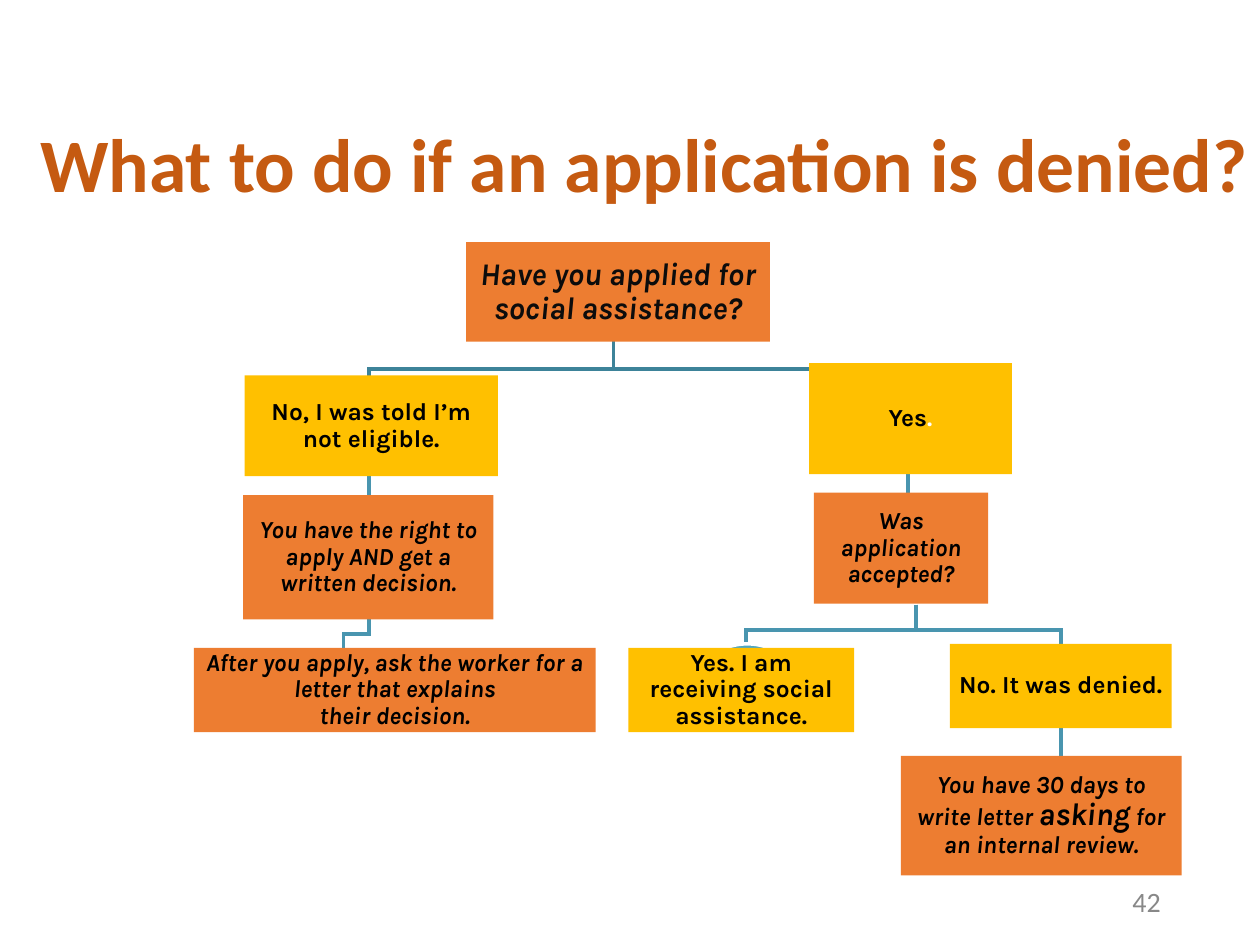
from dataclasses import dataclass

from lxml import etree
from pptx import Presentation
from pptx.dml.color import RGBColor
from pptx.enum import shapes, text
from pptx.oxml.ns import qn
from pptx.util import Cm, Pt


@dataclass(frozen=True)
class Theme:
    title: str = "C55A11"
    orange: str = "ED7D31"
    yellow: str = "FFC000"
    circle: str = "4FA6C1"
    line: str = "4995AF"
    root_line: str = "3D8399"
    black: str = "000000"
    root_text: str = "0C0C0C"
    white: str = "FFFFFF"
    grey: str = "888888"
    title_font: str = "Calibri"
    box_font: str = "Karla"
    title_size: float = 43.2
    number_size: float = 16
    large: float = 18
    body: float = 14
    line_width: float = 2
    elbow: float = 0.28


THEME = Theme()


@dataclass(frozen=True)
class Run:
    text: str
    size: float = THEME.body
    color: str = THEME.black


@dataclass(frozen=True)
class Box:
    """A flow chart box, in cm; questions and advice are orange and italic."""
    left: float
    top: float
    width: float
    height: float
    paragraphs: list[list[Run]]
    answer: bool = False


@dataclass(frozen=True)
class Link:
    x1: float
    y1: float
    x2: float
    y2: float
    color: str = THEME.line


BOXES = [
    Box(9.4, 4.88, 6.12, 2.01, [[Run("Have you applied for social assistance?",
                                     THEME.large, THEME.root_text)]]),
    Box(4.93, 7.57, 5.11, 2.03, [[Run("No, I was told I’m not eligible.")]], True),
    Box(4.9, 9.98, 5.05, 2.51,
        [[Run("You have the right to apply AND get a written decision.")]]),
    Box(3.91, 13.06, 8.1, 1.7,
        [[Run("After you apply, ask the worker for a letter that explains")],
         [Run("their decision.")]]),
    Box(16.31, 7.32, 4.09, 2.24, [[Run("Yes"), Run(".", color=THEME.white)]], True),
    Box(16.41, 9.93, 3.51, 2.24, [[Run("Was application accepted?")]]),
    Box(12.67, 13.06, 4.55, 1.7,
        [[Run("Yes. I am receiving social assistance.")]], True),
    Box(19.15, 12.98, 4.47, 1.7, [[Run("No. It was denied.")]], True),
    Box(18.16, 15.24, 5.66, 2.41,
        [[Run("You have 30 days to write letter "), Run("asking", THEME.large),
          Run(" for an internal review.")]]),
]

LINKS = [
    Link(21.39, 14.68, 21.08, 15.57),
    Link(18.47, 12.19, 21.39, 12.98),
    Link(18.47, 12.19, 15.04, 12.98),
    Link(18.31, 9.42, 18.47, 10.49),
    Link(12.37, 6.76, 18.31, 7.72, THEME.root_line),
    Link(7.44, 12.14, 6.93, 13.06),
    Link(7.44, 9.32, 7.44, 10.41),
    Link(12.37, 6.88, 7.44, 7.72, THEME.root_line),
]


def rgb(color: str) -> RGBColor:
    return RGBColor.from_string(color)


def style_run(r, font: str, size: float, color: str,
              bold: bool = False, italic: bool = False) -> None:
    r.font.name = font
    r.font.size = Pt(size)
    r.font.color.rgb = rgb(color)
    r.font.bold = bold
    r.font.italic = italic


def add_link(s, link: Link) -> None:
    """Draw an open line that goes down, across and down again."""
    bend = link.y2 - THEME.elbow
    points = [(link.x1, bend), (link.x2, bend), (link.x2, link.y2)]
    builder = s.shapes.build_freeform(Cm(link.x1), Cm(link.y1))
    builder.add_line_segments([(Cm(x), Cm(y)) for x, y in points], close=False)
    sp = builder.convert_to_shape()
    sp.shadow.inherit = False
    sp.fill.background()
    sp.line.color.rgb = rgb(link.color)
    sp.line.width = Pt(THEME.line_width)
    ln = sp.line._get_or_add_ln()
    etree.SubElement(ln, qn("a:miter")).set("lim", "800000")


def add_circle(s, left: float, top: float, width: float, height: float) -> None:
    sp = s.shapes.add_shape(shapes.MSO_SHAPE.OVAL,
                            Cm(left), Cm(top), Cm(width), Cm(height))
    sp.shadow.inherit = False
    sp.fill.solid()
    sp.fill.fore_color.rgb = rgb(THEME.circle)
    sp.line.color.rgb = rgb(THEME.white)
    sp.line.width = Pt(THEME.line_width)


def add_box(s, box: Box) -> None:
    sp = s.shapes.add_shape(shapes.MSO_SHAPE.RECTANGLE, Cm(box.left), Cm(box.top),
                            Cm(box.width), Cm(box.height))
    sp.shadow.inherit = False
    sp.fill.solid()
    sp.fill.fore_color.rgb = rgb(THEME.yellow if box.answer else THEME.orange)
    sp.line.fill.background()
    tf = sp.text_frame
    tf.word_wrap = True
    tf.vertical_anchor = text.MSO_ANCHOR.MIDDLE
    tf.margin_left = tf.margin_right = tf.margin_top = tf.margin_bottom = Cm(0.16)
    for i, runs in enumerate(box.paragraphs):
        p = tf.add_paragraph() if i else tf.paragraphs[0]
        p.alignment = text.PP_ALIGN.CENTER
        p.line_spacing = 0.9
        for run in runs:
            r = p.add_run()
            r.text = run.text
            style_run(r, THEME.box_font, run.size, run.color, True, not box.answer)


def add_label(s, left: float, top: float, width: float, height: float,
              label: str, anchor: text.MSO_ANCHOR):
    """Add a Calibri text box and return its paragraph."""
    tf = s.shapes.add_textbox(Cm(left), Cm(top), Cm(width), Cm(height)).text_frame
    tf.word_wrap = True
    tf.vertical_anchor = anchor
    tf.text = label
    return tf.paragraphs[0]


def main() -> None:
    prs = Presentation()
    prs.slide_width, prs.slide_height = Cm(25.4), Cm(19.05)
    s = prs.slides.add_slide(prs.slide_layouts[6])

    p = add_label(s, 0.56, 1.75, 24.94, 2.54,
                  "What to do if an application is denied?", text.MSO_ANCHOR.BOTTOM)
    p.line_spacing = 0.75
    style_run(p.runs[0], THEME.title_font, THEME.title_size, THEME.title, True)

    p = add_label(s, 17.93, 17.65, 5.72, 1.02, "42", text.MSO_ANCHOR.MIDDLE)
    p.alignment = text.PP_ALIGN.RIGHT
    style_run(p.runs[0], THEME.title_font, THEME.number_size, THEME.grey)

    for link in LINKS:
        add_link(s, link)
    add_circle(s, 14.05, 12.98, 2.03, 1.7)
    for box in BOXES:
        add_box(s, box)
    prs.save("out.pptx")


if __name__ == "__main__":
    main()
